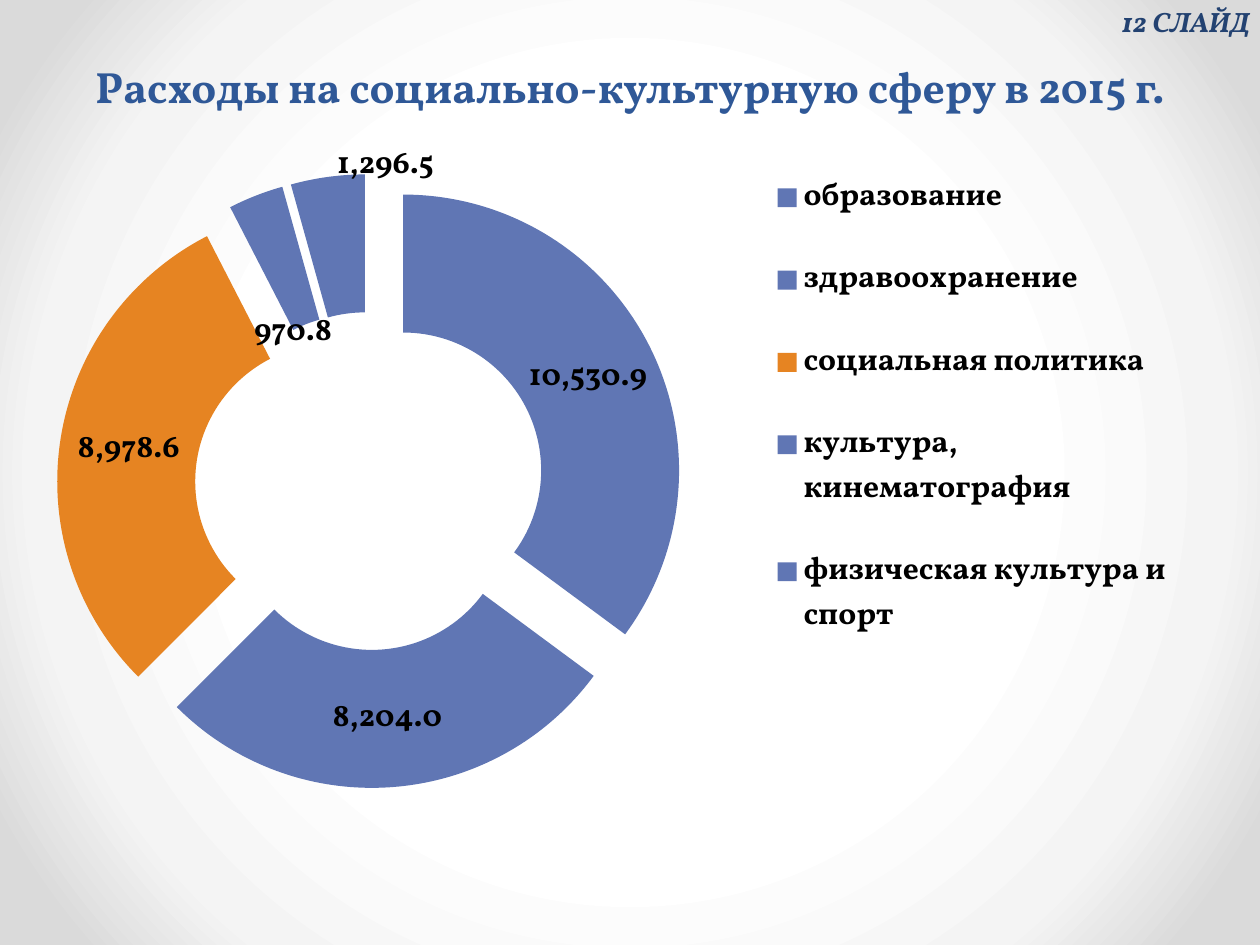
from lxml import etree
from pptx import Presentation
from pptx.chart.data import CategoryChartData
from pptx.dml.color import RGBColor
from pptx.enum.chart import XL_CHART_TYPE, XL_LEGEND_POSITION
from pptx.enum.text import MSO_ANCHOR, PP_ALIGN
from pptx.oxml import parse_xml
from pptx.oxml.ns import qn
from pptx.util import Inches, Pt

RING = XL_CHART_TYPE.DOUGHNUT
RIGHT = XL_LEGEND_POSITION.RIGHT
BOTTOM = MSO_ANCHOR.BOTTOM
CENTER = PP_ALIGN.CENTER
FACE = "Vollkorn"
BLUE, ORANGE = "6076B4", "E68422"


def style(font, size, color):
    font.name = FACE
    font.size = Pt(size)
    font.bold = True
    font.color.rgb = RGBColor.from_string(color)


def place(node, spot, **vals):
    for old in node.findall(qn("c:layout")):
        node.remove(old)
    layout = etree.Element(qn("c:layout"))
    manual = etree.SubElement(layout, qn("c:manualLayout"))
    for key, val in vals.items():
        etree.SubElement(manual, qn("c:" + key)).set("val", str(val))
    node.insert(spot, layout)


deck = Presentation()
deck.slide_width = Inches(10)
deck.slide_height = Inches(7.5)
slide = deck.slides.add_slide(deck.slide_layouts[6])

back = slide.background.fill
back.gradient()
stops = "".join(
    f'<a:gs pos="{pos}000"><a:srgbClr val="{color}"/></a:gs>'
    for pos, color in [(50, "FFFFFF"), (76, "F4F4F4"), (92, "DADADA")]
)
grad = parse_xml(
    '<a:gradFill xmlns:a="http://schemas.openxmlformats.org/drawingml/2006/main" rotWithShape="1">'
    f'<a:gsLst>{stops}</a:gsLst><a:path path="circle">'
    '<a:fillToRect l="50000" t="50000" r="50000" b="50000"/></a:path></a:gradFill>'
)
old = slide.element.find(".//" + qn("a:gradFill"))
old.getparent().replace(old, grad)

title = slide.shapes.add_textbox(Inches(0.5), Inches(0), Inches(9), Inches(1.75))
frame = title.text_frame
frame.word_wrap = True
frame.vertical_anchor = BOTTOM
frame.margin_bottom = Inches(0.86)
para = frame.paragraphs[0]
para.alignment = CENTER
para.line_spacing = Pt(58)
run = para.add_run()
run.text = "Расходы на социально-культурную сферу в 2015 г."
style(run.font, 25, "2F5897")

rows = [
    ("образование", 10530.9, BLUE, 27),
    ("здравоохранение", 8204.0, BLUE, 18),
    ("социальная политика", 8978.6, ORANGE, 27),
    ("культура, кинематография", 970.8, BLUE, 27),
    ("физическая культура и спорт", 1296.5, BLUE, 27),
]
data = CategoryChartData(number_format="#,##0.0")
data.categories = [row[0] for row in rows]
data.add_series("Series 1", [row[1] for row in rows])
chart = slide.shapes.add_chart(
    RING, Inches(-0.2), Inches(0.92), Inches(9.65), Inches(5.78), data
).chart
chart.has_title = False
style(chart.font, 18, "000000")

plot = chart.plots[0]
plot.vary_by_categories = True
plot.has_data_labels = True
labels = plot.data_labels
labels.show_value = True
labels.show_percentage = False
labels.number_format = "#,##0.0"
labels.number_format_is_linked = False
style(labels.font, 18, "000000")
series = plot.series[0]
ring = chart.element.find(".//" + qn("c:doughnutChart"))
ring.find(qn("c:holeSize")).set("val", "50")

for num, (name, value, color, gap) in enumerate(rows):
    point = series.points[num]
    fill = point.format.fill
    fill.solid()
    fill.fore_color.rgb = RGBColor.from_string(color)
    point.format.line.fill.background()
    style(point.data_label.font, 18, "000000")
    burst = etree.Element(qn("c:explosion"))
    burst.set("val", str(gap))
    ring.findall(".//" + qn("c:dPt"))[num].find(qn("c:spPr")).addprevious(burst)
burst = etree.Element(qn("c:explosion"))
burst.set("val", "27")
ring.find(".//" + qn("c:dPt")).addprevious(burst)

tags = ring.findall(".//" + qn("c:dLbl"))
for num, left, top in [(3, 0.01, 0.1), (4, 0.04, -0.11)]:
    place(tags[num], 1, x=left, y=top)

place(
    chart.element.find(".//" + qn("c:plotArea")), 0,
    layoutTarget="inner", xMode="edge", yMode="edge", x=0.05, y=0.08, w=0.55, h=0.86,
)
chart.has_legend = True
legend = chart.legend
legend.position = RIGHT
legend.include_in_layout = False
style(legend.font, 18, "000000")
place(
    chart.element.find(".//" + qn("c:legend")), 1,
    xMode="edge", yMode="edge", x=0.65, y=0.03, w=0.34, h=0.74,
)

label = slide.shapes.add_textbox(Inches(8.72), Inches(-0.01), Inches(1.47), Inches(0.37))
frame = label.text_frame
frame.word_wrap = False
frame.margin_left = Inches(0.18)
run = frame.paragraphs[0].add_run()
run.text = "12 СЛАЙД"
style(run.font, 16, "234271")
run.font.italic = True

deck.save("out.pptx")
